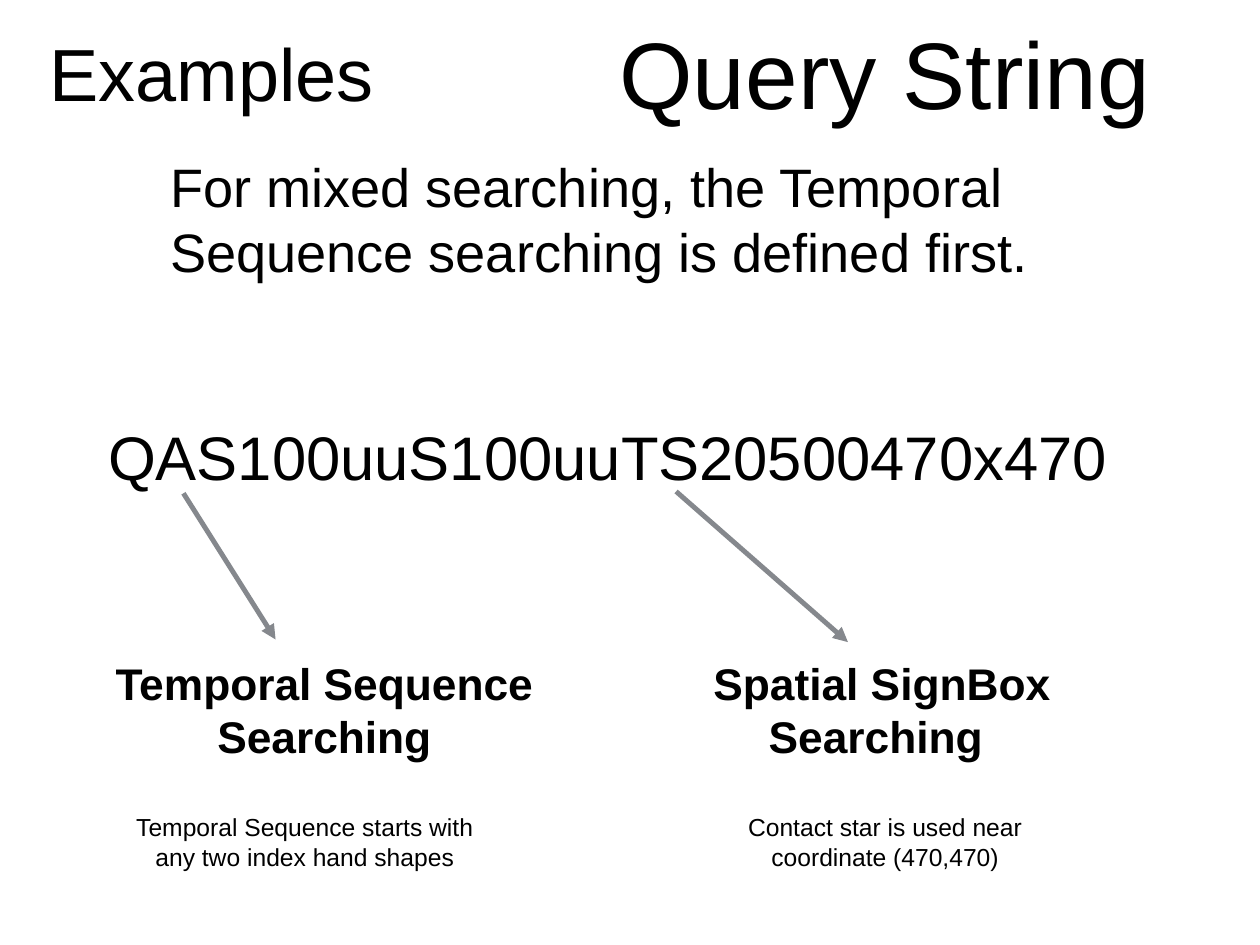
"""Build the "Query String" slide that explains a mixed search."""
from dataclasses import dataclass

from lxml.etree import SubElement
from pptx import Presentation
from pptx.dml.color import RGBColor
from pptx.enum.shapes import MSO_CONNECTOR as Connector
from pptx.enum.text import MSO_ANCHOR as Anchor, MSO_AUTO_SIZE as AutoSize, PP_ALIGN as Align
from pptx.oxml.ns import qn
from pptx.shapes.autoshape import Shape
from pptx.slide import Slide
from pptx.util import Inches, Pt

BLACK = RGBColor(0x00, 0x00, 0x00)
GREY = RGBColor(0x85, 0x88, 0x8D)
FONT = "Arial"
SLIDE_WIDTH, SLIDE_HEIGHT = 14.22, 10.67
HEADER_TOP, HEADER_HEIGHT = 1.03, 13.12
HEADING_TOP, HEADING_HEIGHT = 68.88, 12.28
NOTE_TOP, NOTE_WIDTH, NOTE_HEIGHT = 85.38, 30.94, 7.31
INSET = 0.06


@dataclass(frozen=True)
class Area:
    """A rectangle in percent of the slide's width and height."""
    left: float
    top: float
    width: float
    height: float


@dataclass(frozen=True)
class SearchPart:
    """A part of the query string, with its arrow, heading and note."""
    heading: str
    heading_left: float
    heading_width: float
    note: str
    note_left: float
    arrow_from: tuple[float, float]
    arrow_to: tuple[float, float]


SEARCH_PARTS = (
    SearchPart("Temporal Sequence\nSearching", 8.23, 35.02,
               "Temporal Sequence starts with any two index hand shapes", 8.72,
               (14.56, 52.2), (21.87, 67.67)),
    SearchPart("Spatial SignBox\nSearching ", 55.41, 29.18,
               "Contact star is used near coordinate (470,470)", 54.78,
               (53.66, 52.01), (67.3, 67.95)),
)


def across(percent: float) -> int:
    """Turn a share of the slide's width into a length."""
    return Inches(SLIDE_WIDTH * percent / 100)


def down(percent: float) -> int:
    """Turn a share of the slide's height into a length."""
    return Inches(SLIDE_HEIGHT * percent / 100)


def write(shape: Shape, text: str, *, size: float, bold: bool = False,
          align: Align = Align.LEFT, inset: float = 0) -> None:
    """Fill a shape with formatted text, one paragraph per line."""
    frame = shape.text_frame
    frame.text = text
    frame.word_wrap = True
    frame.auto_size = AutoSize.NONE
    frame.vertical_anchor = Anchor.MIDDLE
    frame.margin_left = frame.margin_right = Inches(inset)
    frame.margin_top = frame.margin_bottom = Inches(inset)
    for paragraph in frame.paragraphs:
        paragraph.alignment = align
        for run in paragraph.runs:
            run.font.name = FONT
            run.font.size = Pt(size)
            run.font.bold = bold
            run.font.color.rgb = BLACK


def add_text(slide: Slide, area: Area, text: str, **text_format) -> None:
    """Add a text box in the given area."""
    box = slide.shapes.add_textbox(across(area.left), down(area.top),
                                   across(area.width), down(area.height))
    write(box, text, **text_format)


def place_title(slide: Slide, area: Area, text: str, size: float) -> None:
    """Move the title placeholder to an area and fill it."""
    title = slide.shapes.title
    title.left, title.top = across(area.left), down(area.top)
    title.width, title.height = across(area.width), down(area.height)
    write(title, text, size=size)


def add_arrow(slide: Slide, start: tuple[float, float], end: tuple[float, float]) -> None:
    """Add a grey arrow between two points."""
    arrow = slide.shapes.add_connector(Connector.STRAIGHT, across(start[0]), down(start[1]),
                                       across(end[0]), down(end[1]))
    arrow.line.color.rgb = GREY
    arrow.line.width = Pt(4)
    SubElement(arrow.line._get_or_add_ln(), qn("a:tailEnd"), type="triangle")
    SubElement(arrow._element.spPr, qn("a:effectLst"))


def add_search_part(slide: Slide, part: SearchPart) -> None:
    """Add the arrow, heading and note of a search part."""
    add_arrow(slide, part.arrow_from, part.arrow_to)
    add_text(slide, Area(part.heading_left, HEADING_TOP, part.heading_width, HEADING_HEIGHT),
             part.heading, size=36, bold=True, align=Align.CENTER, inset=INSET)
    add_text(slide, Area(part.note_left, NOTE_TOP, NOTE_WIDTH, NOTE_HEIGHT),
             part.note, size=20, align=Align.CENTER, inset=INSET)


def main() -> None:
    """Create and save the presentation."""
    presentation = Presentation()
    presentation.slide_width = Inches(SLIDE_WIDTH)
    presentation.slide_height = Inches(SLIDE_HEIGHT)
    slide = presentation.slides.add_slide(presentation.slide_layouts.get_by_name("Title Only"))

    place_title(slide, Area(3.94, HEADER_TOP, 40.44, HEADER_HEIGHT), "Examples", 60)
    add_text(slide, Area(46.91, HEADER_TOP, 46.62, HEADER_HEIGHT), "Query String",
             size=76.8, align=Align.CENTER)
    add_text(slide, Area(13.08, 15.75, 73.84, 14.81),
             "For mixed searching, the Temporal Sequence searching is defined first.",
             size=44, inset=INSET)
    add_text(slide, Area(8.58, 42.08, 82.77, 12.28), "QAS100uuS100uuTS20500470x470", size=50)
    for part in SEARCH_PARTS:
        add_search_part(slide, part)

    presentation.save("out.pptx")


if __name__ == "__main__":
    main()
